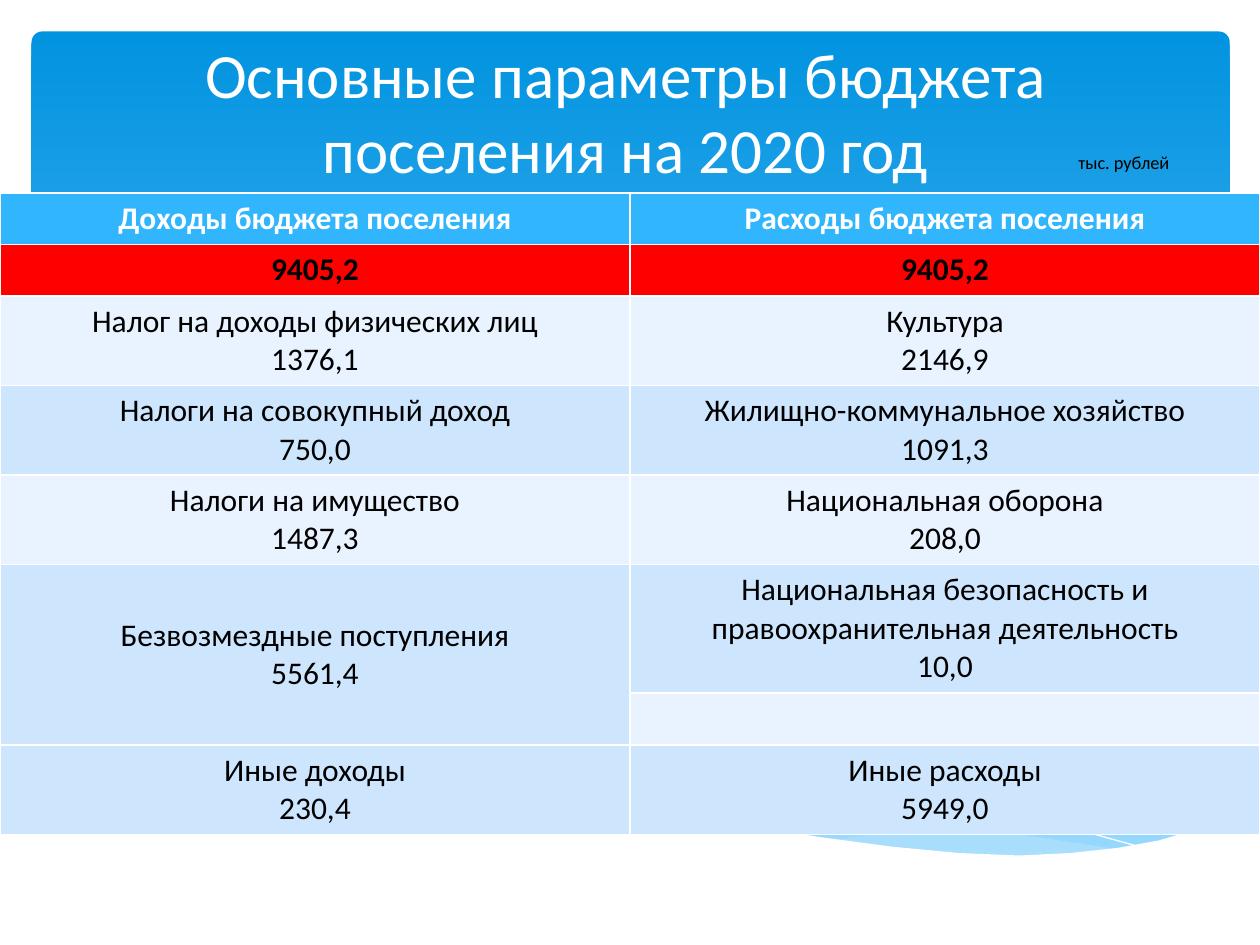
from dataclasses import dataclass

from lxml.etree import SubElement
from pptx import Presentation
from pptx.dml.color import RGBColor
from pptx.enum.shapes import MSO_SHAPE as Kind
from pptx.enum.text import MSO_ANCHOR as Anchor, MSO_AUTO_SIZE as Fit, PP_ALIGN as Align
from pptx.oxml.ns import qn
from pptx.util import Inches, Pt

FONT = "Calibri"
COLORS = {
    "white": "FFFFFF", "black": "000000", "red": "FF0000", "head": "31B6FD",
    "light": "E8F3FF", "mid": "CEE5FE", "top": "0293E0", "foot": "83D3FE",
    "wave": "C6E7FC",
}


@dataclass
class Wave:
    points: list[tuple[float, float]]
    fill: str = ""
    alpha: int = 100


@dataclass
class Row:
    left: list[str]
    right: list[str]
    fill: str
    height: float = 0.71
    ink: str = "black"
    bold: bool = False


WAVES = [
    Wave([(9.77, 6.01), (9.5, 6.06), (9.22, 6.11), (8.92, 6.18), (8.62, 6.25),
          (8.06, 6.39), (7.54, 6.5), (7.07, 6.59), (6.62, 6.67), (6.92, 6.71),
          (7.33, 6.76), (7.7, 6.79), (8.15, 6.8), (8.55, 6.78), (8.9, 6.74),
          (9.22, 6.67), (9.51, 6.59), (9.77, 6.49)], "wave", 29),
    Wave([(8.94, 6.75), (8.67, 6.71), (8.08, 6.62), (7.42, 6.49), (6.69, 6.33),
          (6.3, 6.24), (5.84, 6.13), (5.42, 6.04), (5.02, 5.98), (4.65, 5.93),
          (4.2, 5.89), (3.8, 5.87), (3.45, 5.88), (3.14, 5.9), (2.87, 5.93),
          (3.23, 5.98), (3.63, 6.04), (4.05, 6.13), (4.5, 6.24), (5.3, 6.42),
          (6.02, 6.57), (6.51, 6.66), (6.96, 6.72), (7.37, 6.77), (7.74, 6.79),
          (8.08, 6.8), (8.49, 6.79), (8.77, 6.77)], "wave", 40),
    Wave([(3.1, 5.97), (3.29, 5.94), (3.63, 5.9), (4.02, 5.89), (4.51, 5.89),
          (4.89, 5.92), (5.33, 5.96), (5.82, 6.02), (6.37, 6.1), (6.96, 6.21),
          (7.61, 6.35), (8.32, 6.52), (9.08, 6.73)]),
    Wave([(6.14, 6.59), (6.53, 6.48), (6.96, 6.37), (7.49, 6.25), (8.07, 6.12),
          (8.67, 6), (8.97, 5.96), (9.25, 5.92), (9.52, 5.89), (9.76, 5.87)]),
    Wave([(9.77, 6.48), (9.5, 6.58), (9.2, 6.67), (8.87, 6.73), (8.5, 6.77),
          (8.09, 6.79), (7.61, 6.77), (7.08, 6.72), (6.48, 6.64), (5.79, 6.51),
          (5.03, 6.35), (4.47, 6.22), (3.91, 6.09), (3.4, 5.99), (2.92, 5.92),
          (2.5, 5.88), (2.11, 5.86), (1.61, 5.86), (1.19, 5.89), (0.85, 5.95),
          (0.59, 6.01), (0.4, 6.07), (0.23, 6.15), (0.23, 7.31), (9.77, 7.31)],
         "white"),
]

ROWS = [
    Row(["Доходы бюджета поселения"], ["Расходы бюджета поселения"],
        "head", 0.41, "white", True),
    Row(["9405,2"], ["9405,2"], "red", 0.41, bold=True),
    Row(["Налог на доходы физических лиц", "1376,1"], ["Культура", "2146,9"], "light"),
    Row(["Налоги на совокупный доход", "750,0"],
        ["Жилищно-коммунальное хозяйство", "1091,3"], "mid"),
    Row(["Налоги на имущество", "1487,3"], ["Национальная оборона", "208,0"], "light"),
    Row(["Безвозмездные поступления", "5561,4"],
        ["Национальная безопасность и правоохранительная деятельность", "10,0"],
        "mid", 1.02),
    Row([], [], "light", 0.41),
    Row(["Иные доходы", "230,4"], ["Иные расходы", "5949,0"], "mid"),
]
GIFTS = 5  # the row whose left cell spans two rows


def rgb(name: str) -> RGBColor:
    return RGBColor.from_string(COLORS[name])


def style(para, size: float, ink: str, bold: bool = False, align=Align.CENTER) -> None:
    para.alignment = align
    font = para.font
    font.name, font.size, font.bold = FONT, Pt(size), bold
    font.color.rgb = rgb(ink)


def draw_wave(shapes, wave: Wave) -> None:
    pts = [(Inches(x), Inches(y)) for x, y in wave.points]
    pen = shapes.build_freeform(*pts[0])
    pen.add_line_segments(pts[1:], close=bool(wave.fill))
    shape = pen.convert_to_shape()
    shape.shadow.inherit = False
    if not wave.fill:
        shape.fill.background()
        shape.line.color.rgb = rgb("white")
        shape.line.width = Pt(0)
        return
    shape.line.fill.background()
    shape.fill.solid()
    shape.fill.fore_color.rgb = rgb(wave.fill)
    if wave.alpha < 100:
        tone = shape.fill._xPr.find(".//" + qn("a:srgbClr"))
        SubElement(tone, qn("a:alpha")).set("val", str(wave.alpha * 1000))


def fill_cell(cell, lines: list[str], row: Row) -> None:
    cell.fill.solid()
    cell.fill.fore_color.rgb = rgb(row.fill)
    cell.text = "\n".join(lines)
    for para in cell.text_frame.paragraphs:
        style(para, 18, row.ink, row.bold)


def draw_table(shapes) -> None:
    total = sum(row.height for row in ROWS)
    table = shapes.add_table(len(ROWS), 2, 0, Inches(1.53), Inches(10), Inches(total)).table
    table.horz_banding = False
    for i, row in enumerate(ROWS):
        table.rows[i].height = Inches(row.height)
        for j, lines in enumerate((row.left, row.right)):
            fill_cell(table.cell(i, j), lines, row)
    gifts = table.cell(GIFTS, 0)
    gifts.merge(table.cell(GIFTS + 1, 0))
    gifts.vertical_anchor = Anchor.MIDDLE


def main() -> None:
    deck = Presentation()
    deck.slide_width, deck.slide_height = Inches(10), Inches(7.5)
    slide = deck.slides.add_slide(deck.slide_layouts[5])
    shapes = slide.shapes

    # Gradient panel with waves
    panel = shapes.add_shape(Kind.ROUNDED_RECTANGLE, Inches(0.25), Inches(0.25),
                             Inches(9.51), Inches(6.6))
    panel.adjustments[0] = 0.013
    panel.shadow.inherit = False
    panel.line.fill.background()
    panel.fill.gradient()
    panel.fill.gradient_angle = 270
    for stop, name in zip(panel.fill.gradient_stops, ("top", "foot")):
        stop.color.rgb = rgb(name)
    for wave in WAVES:
        draw_wave(shapes, wave)

    # Title, brought in front of the panel
    title = shapes.title
    title.left, title.top = Inches(0.67), Inches(0.13)
    title.width, title.height = Inches(8.59), Inches(1.4)
    title.text = "Основные параметры бюджета поселения на 2020 год"
    title.text_frame.vertical_anchor = Anchor.BOTTOM
    title.text_frame.auto_size = Fit.NONE
    style(title.text_frame.paragraphs[0], 36, "white")
    panel._element.getparent().append(title._element)

    # Budget table and its unit
    draw_table(shapes)
    unit = shapes.add_textbox(Inches(8.46), Inches(1.15), Inches(1.42), Inches(0.28))
    frame = unit.text_frame
    frame.word_wrap = True
    frame.auto_size = Fit.SHAPE_TO_FIT_TEXT
    frame.text = "тыс. рублей"
    style(frame.paragraphs[0], 10.5, "black", align=Align.LEFT)

    deck.save("out.pptx")


if __name__ == "__main__":
    main()
